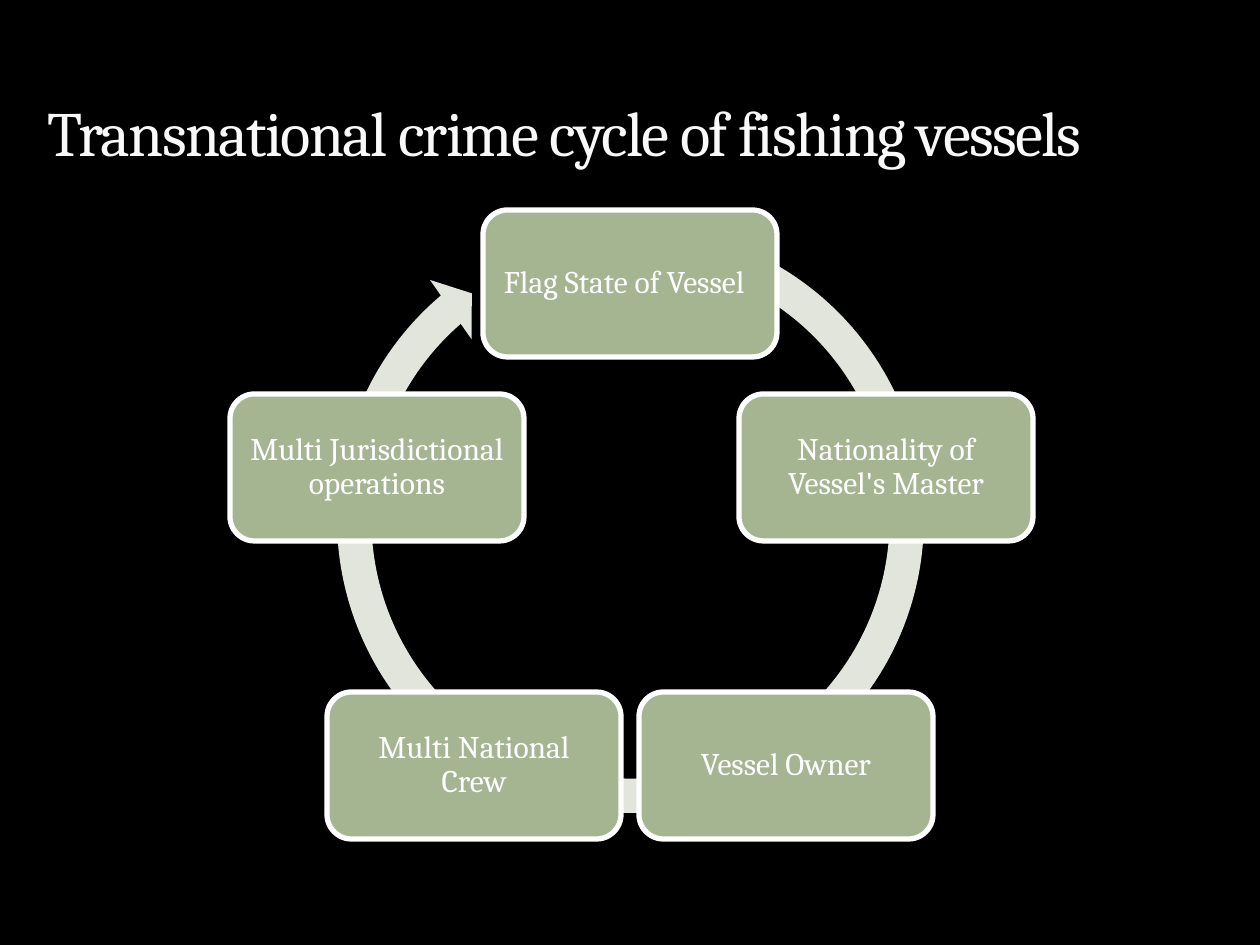
from math import cos, pi, sin

from pptx import Presentation
from pptx.dml.color import RGBColor
from pptx.enum.shapes import MSO_SHAPE
from pptx.enum.text import MSO_ANCHOR, PP_ALIGN
from pptx.util import Pt

PX = 914400 // 126
BLACK = RGBColor(0x00, 0x00, 0x00)
WHITE = RGBColor(0xFF, 0xFF, 0xFF)
OFF_WHITE = RGBColor(0xF9, 0xF9, 0xF9)
SAGE = RGBColor(0xA5, 0xB5, 0x92)
PALE_SAGE = RGBColor(0xE1, 0xE5, 0xDC)

CENTRE_X, CENTRE_Y, RADIUS = 630, 550, 266
STAGE_WIDTH, STAGE_HEIGHT = 294, 147
STAGES = [
    ("Flag State of Vessel", 0),
    ("Nationality of Vessel's Master", 3),
    ("Vessel Owner", 0),
    ("Multi National Crew", 0),
    ("Multi Jurisdictional operations", 0),
]


def add_filled_shape(page, preset, left, top, width, height, color):
    shape = page.shapes.add_shape(preset, left * PX, top * PX, width * PX, height * PX)
    shape.shadow.inherit = False
    shape.fill.solid()
    shape.fill.fore_color.rgb = color
    return shape


def add_span(para, text, size, color):
    span = para.add_run()
    span.text = text
    for name, value in {"name": "Cambria", "size": Pt(size)}.items():
        setattr(span.font, name, value)
    span.font.color.rgb = color
    return span


deck = Presentation()
deck.slide_width, deck.slide_height = 1260 * PX, 945 * PX
page = deck.slides.add_slide(deck.slide_layouts[6])
page.background.fill.solid()
page.background.fill.fore_color.rgb = BLACK

arrow = add_filled_shape(page, MSO_SHAPE.CIRCULAR_ARROW, 318, 207, 625, 625, PALE_SAGE)
arrow.line.fill.background()
for index, value in enumerate([0.055, 3.307, 137.661, 173.92, 0.058]):
    arrow.adjustments[index] = value

stage_format = {
    "word_wrap": True,
    "vertical_anchor": MSO_ANCHOR.MIDDLE,
    "margin_left": 9 * PX,
    "margin_right": 9 * PX,
    "margin_top": 9 * PX,
    "margin_bottom": 9 * PX,
}
for step, (label, nudge) in enumerate(STAGES):
    angle = 2 * pi * step / len(STAGES)
    left = round(CENTRE_X + RADIUS * sin(angle) - STAGE_WIDTH / 2) + nudge
    top = round(CENTRE_Y - RADIUS * cos(angle) - STAGE_HEIGHT / 2)
    box = add_filled_shape(page, MSO_SHAPE.ROUNDED_RECTANGLE, left, top,
                           STAGE_WIDTH, STAGE_HEIGHT, SAGE)
    box.line.color.rgb = WHITE
    box.line.width = Pt(3)
    for name, value in stage_format.items():
        setattr(box.text_frame, name, value)
    para = box.text_frame.paragraphs[0]
    para.alignment = PP_ALIGN.CENTER
    para.line_spacing = 0.9
    add_span(para, label, 18, WHITE)
    if step == 0:
        add_span(para, "\t", 10, WHITE)

title = page.shapes.add_textbox(35 * PX, 38 * PX, 1191 * PX, 137 * PX)
title.text_frame.word_wrap = True
title.text_frame.vertical_anchor = MSO_ANCHOR.BOTTOM
span = add_span(title.text_frame.paragraphs[0],
                "Transnational crime cycle of fishing vessels", 36, OFF_WHITE)
span.font._element.set("spc", "-100")

deck.save("out.pptx")
